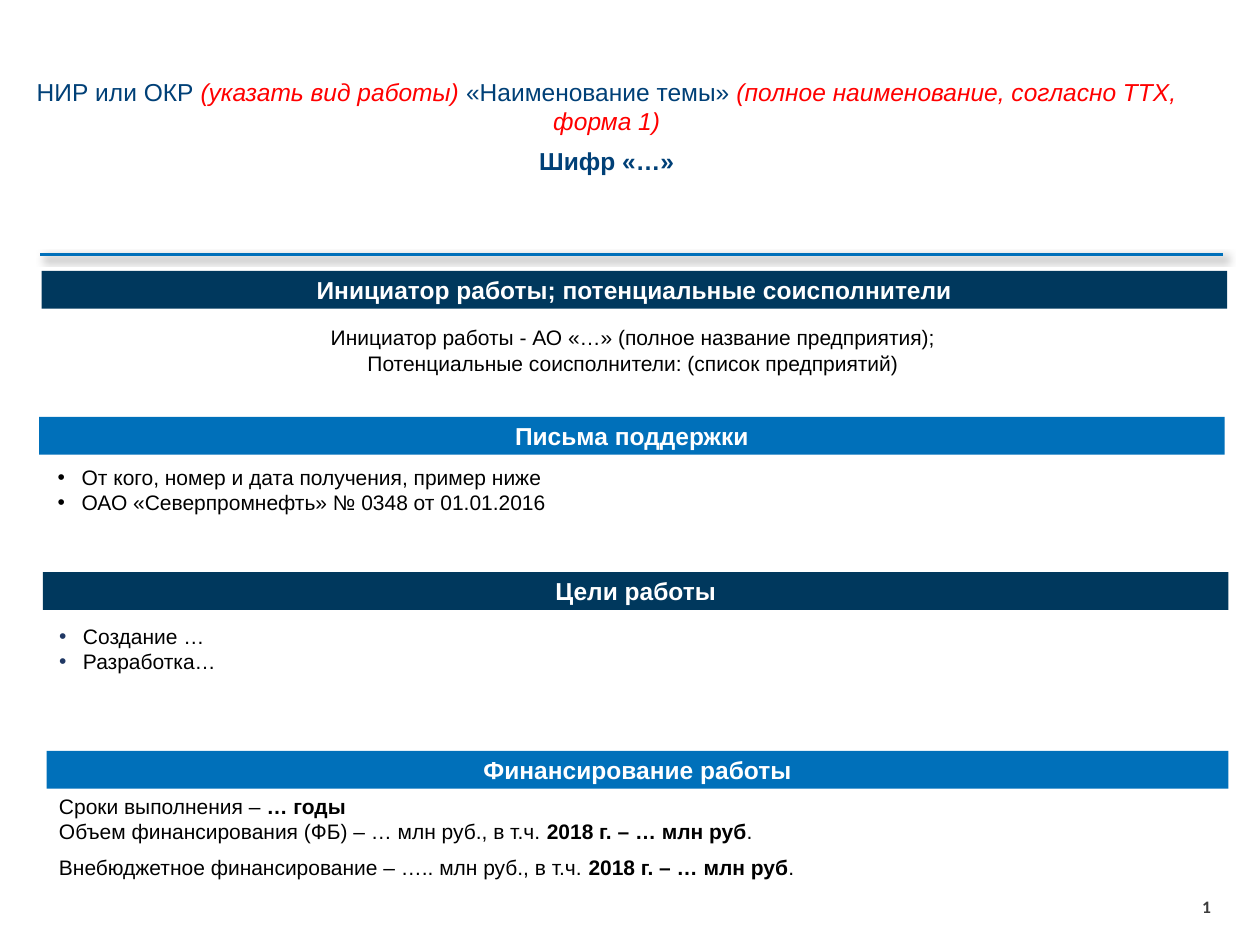
from dataclasses import dataclass

from lxml import etree
from pptx import Presentation
from pptx import util as u
from pptx.dml.color import RGBColor
from pptx.enum import shapes, text
from pptx.oxml import parse_xml
from pptx.oxml.ns import nsdecls, qn


@dataclass(frozen=True)
class Theme:
    navy: str = "00385D"
    blue: str = "0070BA"
    title: str = "004077"
    red: str = "FF0000"
    black: str = "000000"
    white: str = "FFFFFF"
    gray: str = "3C3C3C"
    dot: str = "203864"
    font: str = "Arial"
    head: int = 14
    body: int = 12
    small: int = 10


T = Theme()
COLS, ROWS = 100, 75
WIDE, HIGH = u.Inches(10), u.Inches(7.5)
LEFT, MID, JUST = text.PP_ALIGN.LEFT, text.PP_ALIGN.CENTER, text.PP_ALIGN.JUSTIFY


def place(x, y, w, h):
    return [u.Emu(round(v * full / part)) for v, full, part in
            ((x, WIDE, COLS), (y, HIGH, ROWS), (w, WIDE, COLS), (h, HIGH, ROWS))]


def dot_list(para, tint):
    props = para._p.get_or_add_pPr()
    indent = u.Inches(0.19)
    props.set("marL", str(indent))
    props.set("indent", str(-indent))
    if tint:
        color = etree.SubElement(props, qn("a:buClr"))
        etree.SubElement(color, qn("a:srgbClr")).set("val", tint)
    etree.SubElement(props, qn("a:buFont")).set("typeface", T.font)
    etree.SubElement(props, qn("a:buChar")).set("char", "•")


def write(frame, paras, size=T.body, color=T.black, bold=False, font=T.font,
          align=LEFT, bullet=False, tint=None, gaps=(), anchor=text.MSO_ANCHOR.TOP):
    frame.word_wrap = True
    frame.vertical_anchor = anchor
    for i, runs in enumerate(paras):
        para = frame.paragraphs[0] if i == 0 else frame.add_paragraph()
        para.alignment = align
        if i in gaps:
            para.space_before = u.Pt(6)
        if bullet:
            dot_list(para, tint)
        for item in [runs] if isinstance(runs, str) else runs:
            words, look = (item, {}) if isinstance(item, str) else item
            run = para.add_run()
            run.text = words
            run.font.name = font
            run.font.size = u.Pt(size)
            run.font.bold = look.get("bold", bold)
            run.font.italic = look.get("italic", False)
            run.font.color.rgb = RGBColor.from_string(look.get("color", color))


def add_title(slide, box):
    title = slide.shapes.title
    title.left, title.top, title.width, title.height = place(*box)
    hint = {"color": T.red, "italic": True}
    write(title.text_frame, [
        ["НИР или ОКР ", ("(указать вид работы) ", hint), "«Наименование темы»",
         (" (полное наименование, согласно ТТХ, форма 1)", hint)],
        [("Шифр «…»", {"bold": True})],
    ], size=T.head, color=T.title, align=MID, gaps=(1,))
    title.text_frame.auto_size = text.MSO_AUTO_SIZE.SHAPE_TO_FIT_TEXT


def add_rule(slide, box):
    x, y, w, h = place(*box)
    rule = slide.shapes.add_connector(shapes.MSO_CONNECTOR.STRAIGHT, x, y, x + w, y + h)
    rule.line.color.rgb = RGBColor.from_string(T.blue)
    rule.line.width = u.Pt(1.5)
    rule._element.spPr.append(parse_xml(
        f'<a:effectLst {nsdecls("a")}><a:outerShdw blurRad="{u.Pt(4)}" dist="{u.Pt(3)}" '
        f'dir="2700000" algn="tl" rotWithShape="0"><a:srgbClr val="{T.black}">'
        '<a:alpha val="40000"/></a:srgbClr></a:outerShdw></a:effectLst>'))


def add_part(slide, box, fill, name, inner, paras, **look):
    x, y, w, h = box
    bar = slide.shapes.add_shape(shapes.MSO_SHAPE.RECTANGLE, *place(*box))
    bar.shadow.inherit = False
    bar.fill.solid()
    bar.fill.fore_color.rgb = RGBColor.from_string(fill)
    bar.line.fill.background()
    write(bar.text_frame, [name], size=T.head, color=T.white, bold=True,
          align=MID, anchor=text.MSO_ANCHOR.MIDDLE)
    dx, dy, wide, high = inner
    body = slide.shapes.add_textbox(*place(x + dx, y + dy, wide, high))
    write(body.text_frame, paras, **look)
    body.text_frame.auto_size = text.MSO_AUTO_SIZE.SHAPE_TO_FIT_TEXT


def add_number(slide, box):
    frame = slide.shapes.add_textbox(*place(*box)).text_frame
    frame.margin_left = frame.margin_right = frame.margin_top = frame.margin_bottom = 0
    write(frame, ["1"], size=T.small, color=T.gray, bold=True, font="Calibri")
    run = frame.paragraphs[0].runs[0]._r
    field = etree.Element(qn("a:fld"), id="{B6F15528-21DE-4FAA-801E-634DDDAF4B2B}",
                          type="slidenum")
    run.getparent().replace(run, field)
    field.extend(list(run))


def main():
    deck = Presentation()
    deck.slide_width, deck.slide_height = WIDE, HIGH
    slide = deck.slides.add_slide(deck.slide_layouts[5])
    bold = {"bold": True}
    year = ("2018 г. – … млн руб", bold)

    add_number(slide, (95.4, 71.1, 2.4, 1.8))
    add_rule(slide, (3.2, 20.2, 93.9, 0))
    add_title(slide, (1.2, 5.6, 93.9, 8.9))
    add_part(slide, (3.3, 21.5, 94.1, 3), T.navy,
             "Инициатор работы; потенциальные соисполнители", (0.1, 3.8, 93.7, 5),
             ["Инициатор работы - АО «…» (полное название предприятия);",
              "Потенциальные соисполнители: (список предприятий)"], align=MID)
    add_part(slide, (3.1, 33.1, 94.1, 3), T.blue, "Письма поддержки", (0.5, 3.3, 94.3, 5),
             ["От кого, номер и дата получения, пример ниже",
              "ОАО «Северпромнефть» № 0348 от 01.01.2016"], align=JUST, bullet=True)
    add_part(slide, (3.4, 45.4, 94.1, 3), T.navy, "Цели работы", (0.3, 3.6, 93.5, 5),
             ["Создание …", "Разработка…"], align=JUST, bullet=True, tint=T.dot)
    add_part(slide, (3.7, 59.6, 93.8, 3), T.blue, "Финансирование работы", (0, 2.9, 94.4, 7.9),
             [["Сроки выполнения – ", ("… годы", bold)],
              ["Объем финансирования (ФБ) – … млн руб., в т.ч. ", year, "."],
              ["Внебюджетное финансирование – ….. млн руб., в т.ч. ", year, "."]], gaps=(2,))
    deck.save("out.pptx")


if __name__ == "__main__":
    main()
